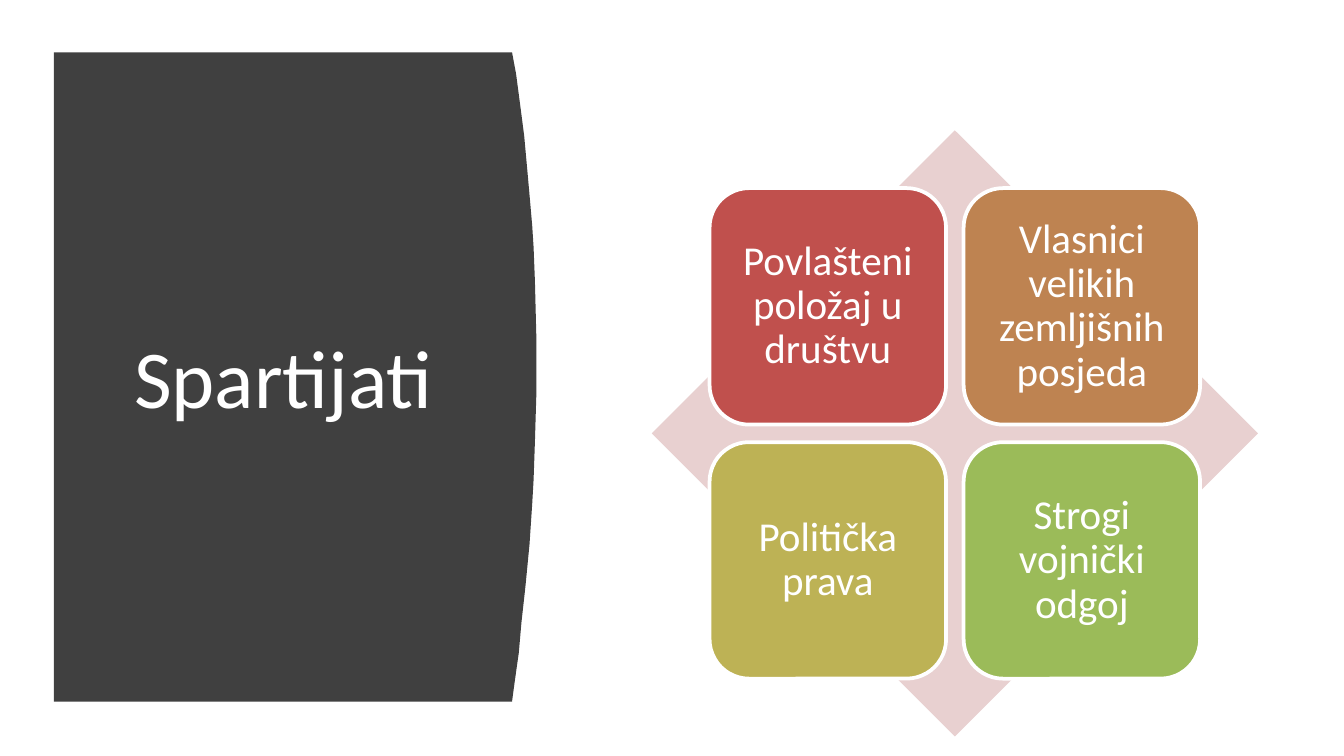
from pptx import Presentation
from pptx.dml.color import RGBColor
from pptx.enum.shapes import MSO_SHAPE
from pptx.enum.text import MSO_ANCHOR, MSO_AUTO_SIZE, PP_ALIGN
from pptx.util import Inches, Pt

DIAMOND = MSO_SHAPE.DIAMOND
ROUNDED = MSO_SHAPE.ROUNDED_RECTANGLE
MIDDLE = MSO_ANCHOR.MIDDLE
NO_AUTOFIT = MSO_AUTO_SIZE.NONE
CENTER = PP_ALIGN.CENTER

FONT = "Calibri"
TITLE_ONLY = 5
WHITE = RGBColor(0xFF, 0xFF, 0xFF)
CHARCOAL = RGBColor(0x40, 0x40, 0x40)
PALE_ROSE = RGBColor(0xE8, 0xD0, 0xD0)
RED = RGBColor(0xC0, 0x50, 0x4D)
COPPER = RGBColor(0xBE, 0x83, 0x51)
OLIVE = RGBColor(0xBD, 0xB2, 0x55)
GREEN = RGBColor(0x9B, 0xBB, 0x59)

# Curved right edge of the title panel, relative to its top left corner
PANEL_EDGE = [
    (3.41, 0), (3.44, 0.16), (3.47, 0.39), (3.5, 0.62), (3.52, 0.84),
    (3.54, 1.06), (3.56, 1.29), (3.57, 1.45), (3.58, 1.7), (3.59, 2.1),
    (3.59, 2.56), (3.58, 2.9), (3.57, 3.18), (3.56, 3.36), (3.54, 3.66),
    (3.51, 3.97), (3.48, 4.24), (3.46, 4.47), (3.43, 4.68), (3.41, 4.83),
]

# Quadrants in reading order
QUADRANTS = [
    ("Povlašteni položaj u društvu", RED),
    ("Vlasnici velikih zemljišnih posjeda", COPPER),
    ("Politička prava", OLIVE),
    ("Strogi vojnički odgoj", GREEN),
]


def write_centered(frame, text, size):
    frame.word_wrap = True
    frame.auto_size = NO_AUTOFIT
    frame.vertical_anchor = MIDDLE
    paragraph = frame.paragraphs[0]
    paragraph.alignment = CENTER
    run = paragraph.add_run()
    run.text = text
    run.font.name = FONT
    run.font.size = Pt(size)
    run.font.color.rgb = WHITE
    return paragraph


def add_title_panel(slide, left, top, height, text):
    # Dark panel with a bulging right side
    outline = [(0, 0), *PANEL_EDGE, (0, height)]
    points = [(Inches(left + x), Inches(top + y)) for x, y in outline]
    builder = slide.shapes.build_freeform(*points[0])
    builder.add_line_segments(points[1:], close=True)
    panel = builder.convert_to_shape()
    panel.shadow.inherit = False
    panel.fill.solid()
    panel.fill.fore_color.rgb = CHARCOAL
    panel.line.fill.background()

    # Title, brought in front of the panel
    title = slide.shapes.title
    title.left, title.top = Inches(left + 0.31), Inches(top + 0.44)
    title.width, title.height = Inches(2.8), Inches(3.93)
    write_centered(title.text_frame, text, 44)
    panel.element.addnext(title.element)


def add_quadrant_matrix(slide, left, top, size, quadrants):
    # Diamond behind the tiles
    diamond = slide.shapes.add_shape(
        DIAMOND, Inches(left), Inches(top), Inches(size), Inches(size))
    diamond.shadow.inherit = False
    diamond.fill.solid()
    diamond.fill.fore_color.rgb = PALE_ROSE
    diamond.line.fill.background()

    # Two by two tiles, centred on the diamond
    tile_size, gap = 1.76, 0.13
    margin = (size - 2 * tile_size - gap) / 2
    for index, (text, color) in enumerate(quadrants):
        row, column = divmod(index, 2)
        x = left + margin + column * (tile_size + gap)
        y = top + margin + row * (tile_size + gap)
        tile = slide.shapes.add_shape(
            ROUNDED, Inches(x), Inches(y), Inches(tile_size), Inches(tile_size))
        tile.shadow.inherit = False
        tile.fill.solid()
        tile.fill.fore_color.rgb = color
        tile.line.color.rgb = WHITE
        tile.line.width = Pt(2)
        frame = tile.text_frame
        frame.margin_left = frame.margin_right = Inches(0.09)
        frame.margin_top = frame.margin_bottom = Inches(0.09)
        write_centered(frame, text, 22).line_spacing = 0.9


def main():
    presentation = Presentation()
    # Widescreen, 16:9
    presentation.slide_width = Inches(10)
    presentation.slide_height = Inches(10 * 9 / 16)
    slide = presentation.slides.add_slide(presentation.slide_layouts[TITLE_ONLY])
    add_title_panel(slide, 0.4, 0.39, 4.83, "Spartijati")
    add_quadrant_matrix(slide, 4.85, 0.97, 4.51, QUADRANTS)
    presentation.save("out.pptx")


if __name__ == "__main__":
    main()
